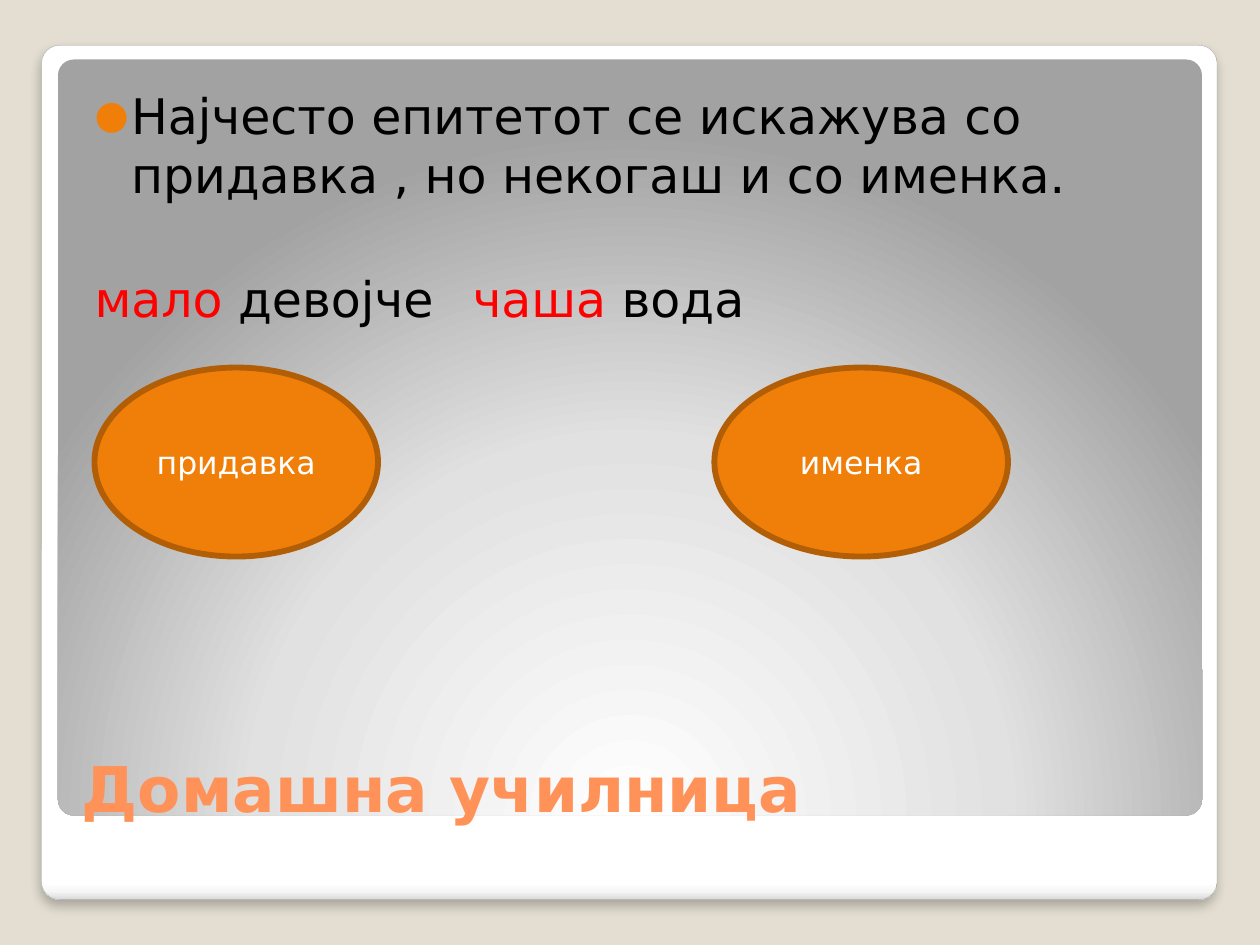
from dataclasses import dataclass

from lxml import etree
from pptx import Presentation
from pptx import util as u
from pptx.dml.color import RGBColor
from pptx.enum import shapes, text
from pptx.oxml import parse_xml
from pptx.oxml.ns import nsdecls, qn

WIDTH, HEIGHT = 10, 7.5
FONT = "DejaVu Sans"
ORANGE, RED, BLACK, WHITE = "F07F09", "FF0000", "000000", "FFFFFF"


@dataclass
class Frame:
    """A rectangle given in shares of the slide's size."""
    left: float
    top: float
    width: float
    height: float

    def place(self) -> tuple:
        return (u.Inches(self.left * WIDTH), u.Inches(self.top * HEIGHT),
                u.Inches(self.width * WIDTH), u.Inches(self.height * HEIGHT))


@dataclass
class Oval:
    label: str
    frame: Frame


@dataclass
class Panel:
    frame: Frame
    stops: list
    direction: str


OVALS = [
    Oval("придавка", Frame(0.075, 0.389, 0.225, 0.2)),
    Oval("именка", Frame(0.567, 0.389, 0.233, 0.2)),
]
CARD = Panel(Frame(0.033, 0.048, 0.933, 0.904),
             [(0, WHITE), (98, WHITE), (99, "F7F7F7"), (100, "DADADA")],
             '<a:lin ang="5400000" scaled="0"/>')
BACKDROP = Panel(Frame(0.046, 0.063, 0.908, 0.8),
                 [(0, WHITE), (55, "E1E1E1"), (100, "A2A2A2")],
                 '<a:path path="circle"><a:fillToRect l="50000" t="175000" '
                 'r="50000" b="-75000"/></a:path>')
TITLE_FRAME = Frame(0.055, 0.727, 0.895, 0.153)
BODY_FRAME = Frame(0.055, 0.077, 0.895, 0.611)


def colour(value: str) -> RGBColor:
    return RGBColor.from_string(value)


def apply(target, values: dict) -> None:
    for name, value in values.items():
        setattr(target, name, value)


def add_span(para, words: str, size: float, tint: str, bold: bool = False) -> None:
    span = para.add_run()
    span.text = words
    apply(span.font, {"name": FONT, "size": u.Pt(size), "bold": bold})
    span.font.color.rgb = colour(tint)


def add_panel(page, panel: Panel):
    shape = page.shapes.add_shape(shapes.MSO_SHAPE.ROUNDED_RECTANGLE,
                                  *panel.frame.place())
    shape.adjustments[0] = 0.021
    shape.shadow.inherit = False
    shape.line.fill.background()
    shape.fill.background()
    stops = "".join(f'<a:gs pos="{share * 1000}"><a:srgbClr val="{tint}"/></a:gs>'
                    for share, tint in panel.stops)
    gradient = parse_xml(f'<a:gradFill {nsdecls("a")} rotWithShape="1">'
                         f'<a:gsLst>{stops}</a:gsLst>{panel.direction}</a:gradFill>')
    properties = shape.element.spPr
    properties.replace(properties.find(qn("a:noFill")), gradient)
    return shape


def add_soft_shadow(shape) -> None:
    effects = shape.element.spPr.find(qn("a:effectLst"))
    effects.append(parse_xml(
        f'<a:outerShdw {nsdecls("a")} blurRad="{u.Pt(6)}" dist="{u.Pt(4)}" '
        'dir="5400000" algn="t" rotWithShape="0"><a:srgbClr val="000000">'
        '<a:alpha val="25000"/></a:srgbClr></a:outerShdw>'))


def add_oval(page, oval: Oval) -> None:
    shape = page.shapes.add_shape(shapes.MSO_SHAPE.OVAL, *oval.frame.place())
    shape.shadow.inherit = False
    shape.fill.solid()
    shape.fill.fore_color.rgb = colour(ORANGE)
    shape.line.color.rgb = colour("B25E07")
    shape.line.width = u.Pt(3.35)
    shape.text_frame.vertical_anchor = text.MSO_ANCHOR.MIDDLE
    para = shape.text_frame.paragraphs[0]
    para.alignment = text.PP_ALIGN.CENTER
    add_span(para, oval.label, 18, WHITE)


def prepare(box, frame: Frame, settings: dict) -> None:
    """Move a placeholder into its frame, in front of the panels."""
    apply(box, dict(zip(("left", "top", "width", "height"), frame.place())))
    apply(box.text_frame, {"word_wrap": True,
                           "auto_size": text.MSO_AUTO_SIZE.NONE, **settings})
    box.element.getparent().append(box.element)


def set_bullet(para) -> None:
    layout = para._p.get_or_add_pPr()
    layout.set("marL", str(u.Inches(0.29)))
    layout.set("indent", str(-u.Inches(0.29)))
    tint = etree.SubElement(layout, qn("a:buClr"))
    etree.SubElement(tint, qn("a:srgbClr"), val=ORANGE)
    etree.SubElement(layout, qn("a:buSzPct"), val="80000")
    etree.SubElement(layout, qn("a:buFont"), typeface=FONT)
    etree.SubElement(layout, qn("a:buChar"), char="●")


def set_plain_with_tab(para, stop: float) -> None:
    layout = para._p.get_or_add_pPr()
    layout.set("marL", "0")
    layout.set("indent", "0")
    etree.SubElement(layout, qn("a:buNone"))
    tabs = etree.SubElement(layout, qn("a:tabLst"))
    etree.SubElement(tabs, qn("a:tab"), pos=str(u.Inches(stop)), algn="l")


def fill_body(box) -> None:
    rule = box.text_frame.paragraphs[0]
    apply(rule, {"space_before": u.Pt(2.5), "line_spacing": 1.0})
    set_bullet(rule)
    add_span(rule, "Најчесто епитетот се искажува со придавка , "
                   "но некогаш и со именка.", 28, BLACK)

    # The second example lines up with the second oval
    examples = box.text_frame.add_paragraph()
    apply(examples, {"space_before": u.Pt(37.5), "line_spacing": 1.0})
    set_plain_with_tab(examples, (OVALS[1].frame.left - OVALS[0].frame.left) * WIDTH)
    for words, tint in [("мало", RED), (" девојче\t", BLACK),
                        ("чаша", RED), (" вода", BLACK)]:
        add_span(examples, words, 28, tint)


def main() -> None:
    deck = Presentation()
    deck.slide_width, deck.slide_height = u.Inches(WIDTH), u.Inches(HEIGHT)
    page = deck.slides.add_slide(deck.slide_layouts[1])
    page.background.fill.solid()
    page.background.fill.fore_color.rgb = colour("E3DED1")

    # Card and gradient backdrop
    card = add_panel(page, CARD)
    card.line.color.rgb = colour("A4A4A4")
    card.line.width = u.Pt(0.16)
    add_soft_shadow(card)
    add_panel(page, BACKDROP)

    # Title
    title, body = page.shapes.title, page.placeholders[1]
    prepare(title, TITLE_FRAME, {"vertical_anchor": text.MSO_ANCHOR.BOTTOM})
    heading = title.text_frame.paragraphs[0]
    heading.alignment = text.PP_ALIGN.LEFT
    add_span(heading, "Домашна училница", 36, "FF9258", bold=True)

    # Rule and examples
    prepare(body, BODY_FRAME, {
        "vertical_anchor": text.MSO_ANCHOR.TOP,
        "margin_left": u.Inches(0.2), "margin_top": u.Inches(0.1),
        "margin_right": u.Inches(0.1), "margin_bottom": u.Inches(0.05)})
    fill_body(body)

    # Parts of speech
    for oval in OVALS:
        add_oval(page, oval)

    deck.save("out.pptx")


if __name__ == "__main__":
    main()
